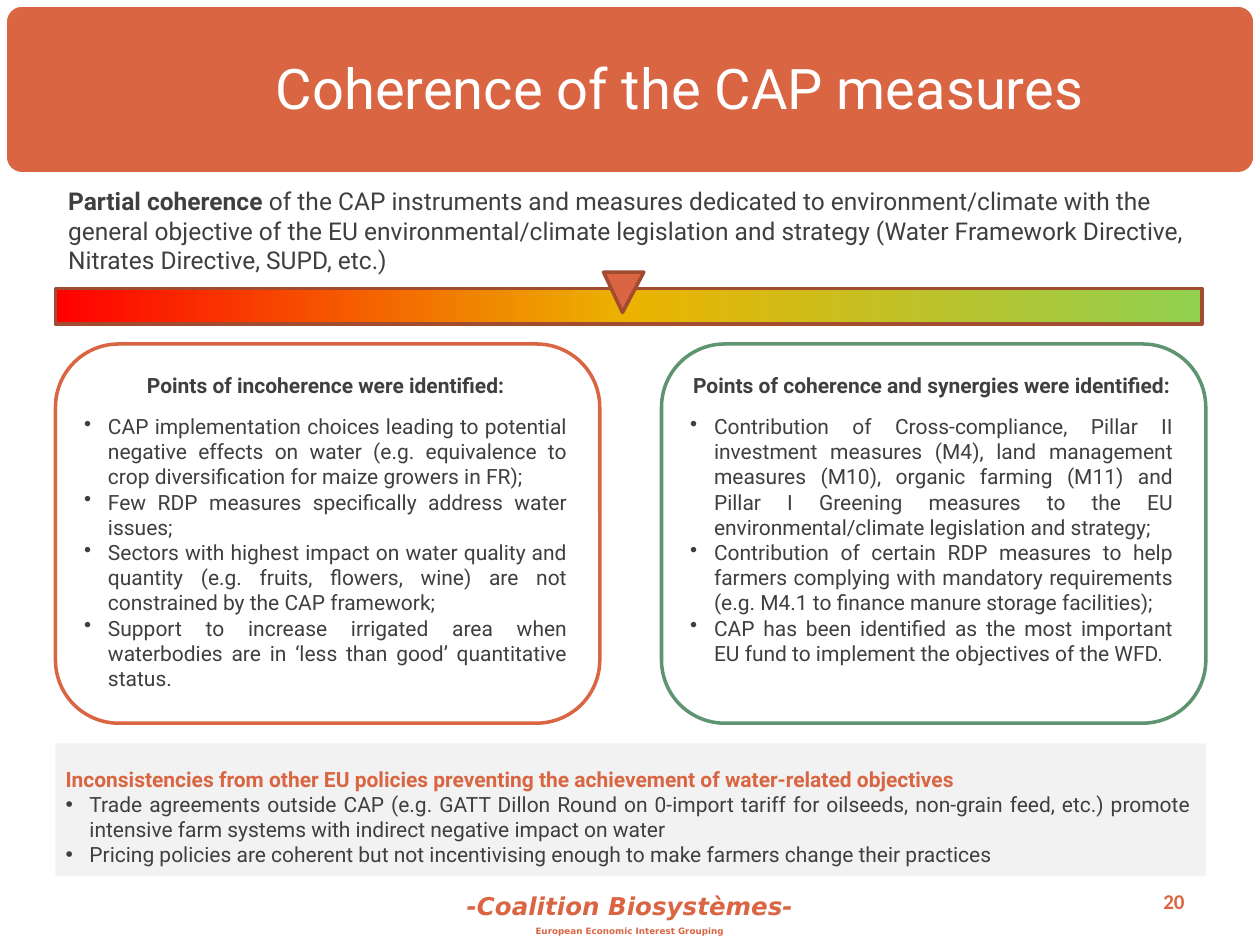
import copy
from dataclasses import dataclass

import lxml.etree
import pptx
import pptx.dml.color
import pptx.enum.shapes
import pptx.enum.text
import pptx.oxml.ns
import pptx.util

PX = 9144
SHAPE = pptx.enum.shapes.MSO_SHAPE
ALIGN = pptx.enum.text.PP_ALIGN
ANCHOR = pptx.enum.text.MSO_ANCHOR


@dataclass(frozen=True)
class Theme:
    accent: str = "DA6542"
    edge: str = "A14B31"
    good: str = "5F9471"
    ink: str = "3F3F3F"
    white: str = "FFFFFF"
    pale: str = "F2F2F2"
    scale: tuple = ((0, "FF0000"), (0.5, "EBB300"), (1, "92D050"))
    font: str = "Roboto"
    number_font: str = "Calibri"
    footer_font: str = "DejaVu Sans"
    title: int = 32
    lead: int = 14
    body: int = 12
    tiny: int = 5
    line: int = 2


THEME = Theme()
BOX_INSETS = (8, 8, 11, 12)
MARGIN = 44
CONTENT_WIDTH = 913
PANEL_WIDTH = 432

INTRO = (
    "Partial coherence ",
    "of the CAP instruments and measures dedicated to environment/climate with the general objective of the EU "
    "environmental/climate legislation and strategy (Water Framework Directive, Nitrates Directive, SUPD, etc.)",
)
PANELS = (
    (THEME.accent, "Points of incoherence were identified:", (
        "CAP implementation choices leading to potential negative effects on water (e.g. equivalence to crop "
        "diversification for maize growers in FR);",
        "Few RDP measures specifically address water issues;",
        "Sectors with highest impact on water quality and quantity (e.g. fruits, flowers, wine) are not "
        "constrained by the CAP framework;",
        "Support to increase irrigated area when waterbodies are in ‘less than good’ quantitative status.",
    )),
    (THEME.good, "Points of coherence and synergies were identified:", (
        "Contribution of Cross-compliance, Pillar II investment measures (M4), land management measures (M10), "
        "organic farming (M11) and Pillar I Greening measures to the EU environmental/climate legislation and "
        "strategy;",
        "Contribution of certain RDP measures to help farmers complying with mandatory requirements (e.g. M4.1 "
        "to finance manure storage facilities);",
        "CAP has been identified as the most important EU fund to implement the objectives of the WFD.",
    )),
)
POLICIES_HEADING = "Inconsistencies from other EU policies preventing the achievement of water-related objectives"
POLICIES = (
    "Trade agreements outside CAP (e.g. GATT Dillon Round on 0-import tariff for oilseeds, non-grain feed, etc.) "
    "promote intensive farm systems with indirect negative impact on water",
    "Pricing policies are coherent but not incentivising enough to make farmers change their practices",
)


def rgb(value):
    return pptx.dml.color.RGBColor.from_string(value)


def apply(target, values):
    for key, value in values.items():
        setattr(target, key, value)


def place(part, box):
    apply(part, dict(zip(("left", "top", "width", "height"), (n * PX for n in box))))


def set_frame(part, insets=(10, 5, 10, 5), anchor=ANCHOR.TOP):
    frame = part.text_frame
    sides = ("margin_left", "margin_top", "margin_right", "margin_bottom")
    apply(frame, dict(zip(sides, (n * PX for n in insets))))
    apply(frame, {"word_wrap": True, "auto_size": pptx.enum.text.MSO_AUTO_SIZE.NONE,
                  "vertical_anchor": anchor})
    return frame


def add_run(paragraph, text, size=THEME.body, color=THEME.ink, bold=False, italic=False, name=THEME.font):
    run = paragraph.add_run()
    run.text = text
    apply(run.font, {"size": pptx.util.Pt(size), "bold": bold, "italic": italic, "name": name})
    run.font.color.rgb = rgb(color)


def format_paragraph(paragraph, align=ALIGN.LEFT, before=0, after=0, spacing=1.0, bullet=False):
    apply(paragraph, {"alignment": align, "space_before": pptx.util.Pt(before),
                      "space_after": pptx.util.Pt(after), "line_spacing": spacing})
    properties = paragraph._p.get_or_add_pPr()
    indent = 19 * PX if bullet else 0
    properties.set("marL", str(indent))
    properties.set("indent", str(-indent))
    tag = pptx.oxml.ns.qn("a:buChar" if bullet else "a:buNone")
    mark = lxml.etree.SubElement(properties, tag)
    if bullet:
        mark.set("char", "•")


def add_bullets(frame, items):
    for item in items:
        paragraph = frame.add_paragraph()
        format_paragraph(paragraph, ALIGN.JUSTIFY, bullet=True)
        add_run(paragraph, item)


def add_block(slide, kind, box, fill, line):
    block = slide.shapes.add_shape(kind, *(n * PX for n in box))
    block.shadow.inherit = False
    block.fill.solid()
    block.fill.fore_color.rgb = rgb(fill)
    block.line.color.rgb = rgb(line)
    block.line.width = pptx.util.Pt(THEME.line)
    return block


def add_header(slide, box):
    left, top, width, height = box
    banner = add_block(slide, SHAPE.ROUNDED_RECTANGLE, box, THEME.accent, THEME.white)
    banner.adjustments[0] = 0.1
    title = slide.shapes.title
    banner.element.addnext(title.element)
    place(title, (left + 208, top + 33, width - 208, 71))
    heading = set_frame(title, (7, 7, 7, 7), ANCHOR.MIDDLE).paragraphs[0]
    format_paragraph(heading, spacing=0.9)
    add_run(heading, "Coherence of the CAP measures", THEME.title, THEME.white)


def add_intro(intro, box):
    place(intro, box)
    paragraph = set_frame(intro).paragraphs[0]
    format_paragraph(paragraph)
    for text, bold in zip(INTRO, (True, False)):
        add_run(paragraph, text, THEME.lead, bold=bold)


def add_scale(slide, box):
    left, top, width, height = box
    bar = add_block(slide, SHAPE.RECTANGLE, box, THEME.white, THEME.edge)
    bar.fill.gradient()
    bar.fill.gradient_angle = 0
    stops = bar.element.find(".//" + pptx.oxml.ns.qn("a:gsLst"))
    stops.insert(1, copy.deepcopy(stops[0]))
    for stop, (position, color) in zip(bar.fill.gradient_stops, THEME.scale):
        stop.position = position
        stop.color.rgb = rgb(color)
    marker = add_block(slide, SHAPE.ISOSCELES_TRIANGLE, (left + 435, top - 13, 32, 32),
                       THEME.accent, THEME.edge)
    marker.rotation = 180
    marker.adjustments[0] = 0.53


def add_panel(slide, box, color, heading, items):
    panel = add_block(slide, SHAPE.ROUNDED_RECTANGLE, box, THEME.white, color)
    frame = set_frame(panel, BOX_INSETS)
    format_paragraph(frame.paragraphs[0], ALIGN.CENTER, after=9)
    add_run(frame.paragraphs[0], heading, bold=True)
    add_bullets(frame, items)


def add_policies(policies, box):
    place(policies, box)
    policies.fill.solid()
    policies.fill.fore_color.rgb = rgb(THEME.pale)
    frame = set_frame(policies, BOX_INSETS)
    format_paragraph(frame.paragraphs[0], spacing=1.5)
    add_run(frame.paragraphs[0], POLICIES_HEADING, color=THEME.accent, bold=True)
    add_bullets(frame, POLICIES)


def add_footer(slide, box):
    left, top, width, height = box
    signature = set_frame(slide.shapes.add_textbox(*(n * PX for n in box)))
    lines = (("-Coalition Biosystèmes-", THEME.lead, True),
             ("European Economic Interest Grouping", THEME.tiny, False))
    for index, (text, size, italic) in enumerate(lines):
        paragraph = signature.add_paragraph() if index else signature.paragraphs[0]
        format_paragraph(paragraph, ALIGN.CENTER, before=3)
        add_run(paragraph, text, size, THEME.accent, True, italic, THEME.footer_font)
    number_box = (left + 717, top - 7, 233, 40)
    number = slide.shapes.add_textbox(*(n * PX for n in number_box))
    paragraph = set_frame(number, anchor=ANCHOR.MIDDLE).paragraphs[0]
    format_paragraph(paragraph, ALIGN.RIGHT)
    add_run(paragraph, "20", THEME.body, THEME.accent, True, name=THEME.number_font)


def main():
    deck = pptx.Presentation()
    apply(deck, {"slide_width": 1000 * PX, "slide_height": 750 * PX})
    slide = deck.slides.add_slide(deck.slide_layouts[3])
    add_header(slide, (4, 4, 992, 134))
    add_intro(slide.placeholders[1], (MARGIN, 143, CONTENT_WIDTH, 81))
    add_scale(slide, (MARGIN, 229, 910, 28))
    for index, panel in enumerate(PANELS):
        left = MARGIN + index * (CONTENT_WIDTH - PANEL_WIDTH)
        add_panel(slide, (left, 273, PANEL_WIDTH, 301), *panel)
    add_policies(slide.placeholders[2], (MARGIN, 590, CONTENT_WIDTH, 105))
    add_footer(slide, (0, 702, 1000, 48))
    deck.save("out.pptx")


if __name__ == "__main__":
    main()
